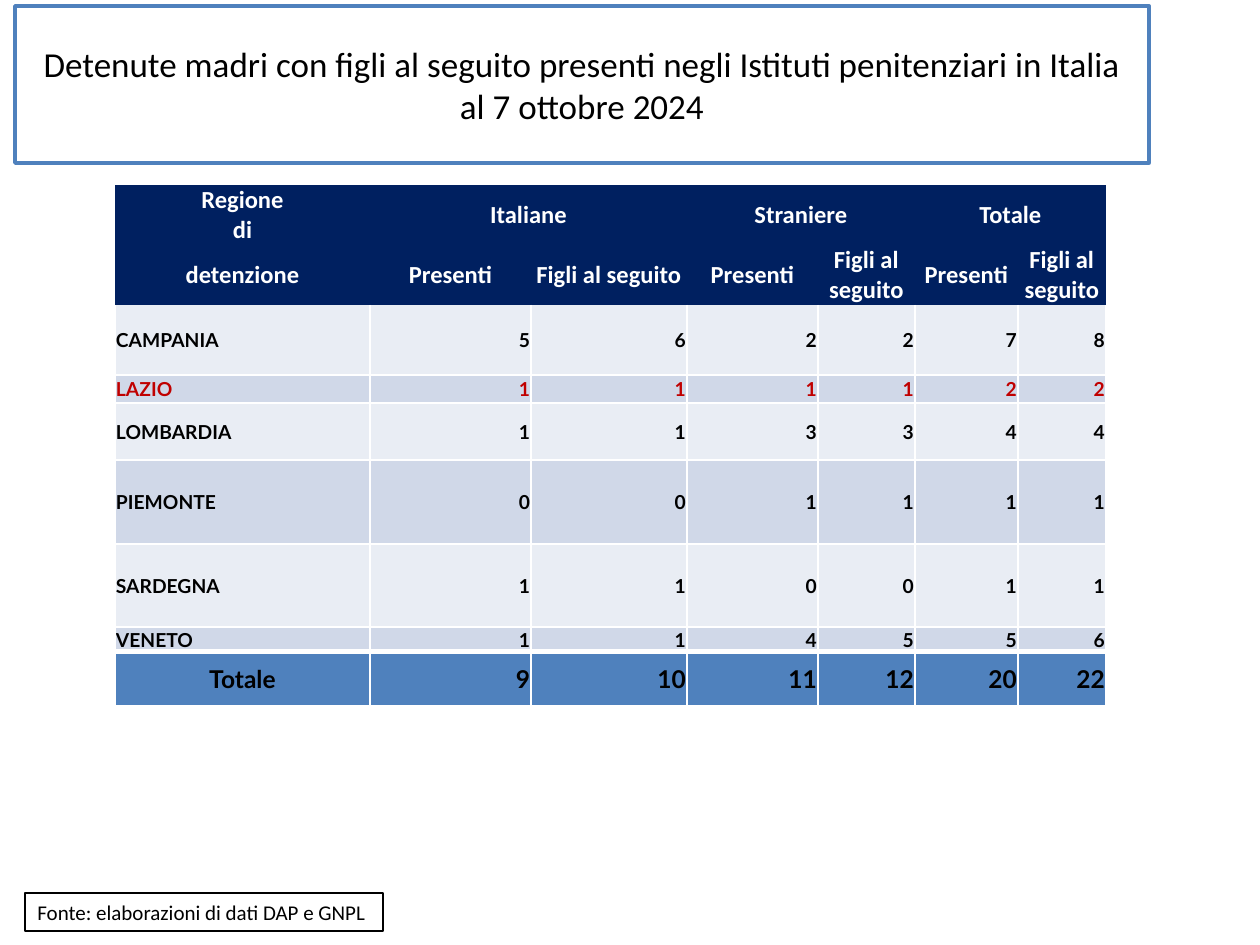
from pptx import Presentation
from pptx.dml.color import RGBColor
from pptx.enum.shapes import MSO_SHAPE as Shape
from pptx.enum.text import MSO_ANCHOR as Anchor, MSO_AUTO_SIZE as Auto, PP_ALIGN as Align
from pptx.oxml import parse_xml
from pptx.oxml.ns import nsdecls, qn
from pptx.util import Emu, Pt

# Content
TITLE = ("Detenute madri con figli al seguito presenti negli Istituti "
         "penitenziari in Italia\val 7 ottobre 2024")
SOURCE = "Fonte: elaborazioni di dati DAP e GNPL"
STUB = ["Regione", "di", "detenzione"]
GROUPS = ["Italiane", "Straniere", "Totale"]
PAIR = ["Presenti", "Figli al seguito"]
REGIONS = [
    ("CAMPANIA", 5, 6, 2, 2, 7, 8),
    ("LAZIO", 1, 1, 1, 1, 2, 2),
    ("LOMBARDIA", 1, 1, 3, 3, 4, 4),
    ("PIEMONTE", 0, 0, 1, 1, 1, 1),
    ("SARDEGNA", 1, 1, 0, 0, 1, 1),
    ("VENETO", 1, 1, 4, 5, 5, 6),
]
TOTAL = ("Totale", 9, 10, 11, 12, 20, 22)
MARKED = "LAZIO"

# Layout in px
PX = 914400 // 126
TITLE_BOX = (15, 6, 1134, 157)
SOURCE_BOX = (25, 893, 358, 38)
TABLE_AT = (115, 185)
COLS = [255, 161, 156, 131, 97, 103, 88]
ROWS = [30, 30, 60, 70, 28, 57, 84, 83, 25, 54]

THEME = {
    "white": "FFFFFF", "black": "000000", "navy": "002060", "blue": "4F81BD",
    "red": "C00000", "bands": ("E9EDF4", "D0D8E8"),
    "font": "Calibri", "body": "Lato",
    "title": 20, "head": 14, "cell": 11, "sum": 14, "note": 12,
}
NO_GRID = "{2D5ABB26-0587-4C30-8999-92F81FD0307C}"


def px(*nums):
    return [Emu(n * PX) for n in nums]


def rgb(code):
    return RGBColor.from_string(code)


def write(frame, text, size, align, color="black", font="font", bold=False):
    frame.text = text
    para = frame.paragraphs[0]
    para.alignment = align
    look = {"size": Pt(size), "name": THEME[font], "bold": bold}
    for run in para.runs:
        for key, val in look.items():
            setattr(run.font, key, val)
        run.font.color.rgb = rgb(THEME[color])


def frame_box(shape, line, width):
    shape.fill.solid()
    shape.fill.fore_color.rgb = rgb(THEME["white"])
    shape.line.color.rgb = rgb(THEME[line])
    shape.line.width = Pt(width)


def border(cell, sides):
    props = cell._tc.get_or_add_tcPr()
    for side, width in sides.items():
        props.append(parse_xml(
            f'<a:ln{side} {nsdecls("a")} w="{Pt(width)}"><a:solidFill>'
            f'<a:srgbClr val="{THEME["white"]}"/></a:solidFill></a:ln{side}>'))


def style(cell, fill, pad, sides):
    border(cell, sides)
    cell.fill.solid()
    cell.fill.fore_color.rgb = rgb(fill)
    cell.vertical_anchor = Anchor.MIDDLE
    for name in ("left", "right", "top"):
        setattr(cell, f"margin_{name}", Emu(pad * PX))
    cell.margin_bottom = 0


def add_head(table):
    for row in range(len(STUB)):
        for col in range(len(COLS)):
            style(table.cell(row, col), THEME["navy"], 0, {})
    look = (THEME["head"], Align.CENTER, "white", "font", True)
    for row, text in enumerate(STUB):
        write(table.cell(row, 0).text_frame, text, *look)
    for i, group in enumerate(GROUPS):
        left = 1 + 2 * i
        cell = table.cell(0, left)
        cell.merge(table.cell(1, left + 1))
        write(cell.text_frame, group, *look)
        for j, text in enumerate(PAIR):
            write(table.cell(2, left + j).text_frame, text, *look)


def add_row(table, row, values, fill, sides, size, first, color="black"):
    for col, value in enumerate(values):
        cell = table.cell(row, col)
        style(cell, fill, 1, sides)
        write(cell.text_frame, str(value), size, Align.RIGHT if col else first,
              color, "body", True)


def add_table(slide):
    table = slide.shapes.add_table(
        len(ROWS), len(COLS), *px(*TABLE_AT, sum(COLS), sum(ROWS))).table
    table.first_row = table.horz_banding = False
    table._tbl.tblPr.find(qn("a:tableStyleId")).text = NO_GRID
    for col, width in zip(table.columns, COLS):
        col.width = Emu(width * PX)
    for row, height in zip(table.rows, ROWS):
        row.height = Emu(height * PX)
    add_head(table)
    top = len(STUB)
    for i, values in enumerate(REGIONS):
        sides = {"L": 1, "R": 1}
        if i:
            sides["T"] = 1
        sides["B"] = 3 if i == len(REGIONS) - 1 else 1
        add_row(table, top + i, values, THEME["bands"][i % 2], sides, THEME["cell"],
                Align.LEFT, "red" if values[0] == MARKED else "black")
    add_row(table, top + len(REGIONS), TOTAL, THEME["blue"],
            {"L": 1, "R": 1, "T": 3, "B": 1}, THEME["sum"], Align.CENTER)


def main():
    deck = Presentation()
    deck.slide_width, deck.slide_height = px(1260, 945)
    slide = deck.slides.add_slide(deck.slide_layouts[5])

    # Title
    title = slide.shapes.title
    title.left, title.top, title.width, title.height = px(*TITLE_BOX)
    frame_box(title, "blue", 2)
    title.text_frame.auto_size = Auto.NONE
    title.text_frame.vertical_anchor = Anchor.MIDDLE
    write(title.text_frame, TITLE, THEME["title"], Align.CENTER)

    # Table
    add_table(slide)

    # Source note
    note = slide.shapes.add_shape(Shape.RECTANGLE, *px(*SOURCE_BOX))
    note.shadow.inherit = False
    frame_box(note, "black", 0.75)
    note.text_frame.word_wrap = False
    note.text_frame.auto_size = Auto.SHAPE_TO_FIT_TEXT
    note.text_frame.vertical_anchor = Anchor.TOP
    write(note.text_frame, SOURCE, THEME["note"], Align.LEFT)

    deck.save("out.pptx")


if __name__ == "__main__":
    main()
